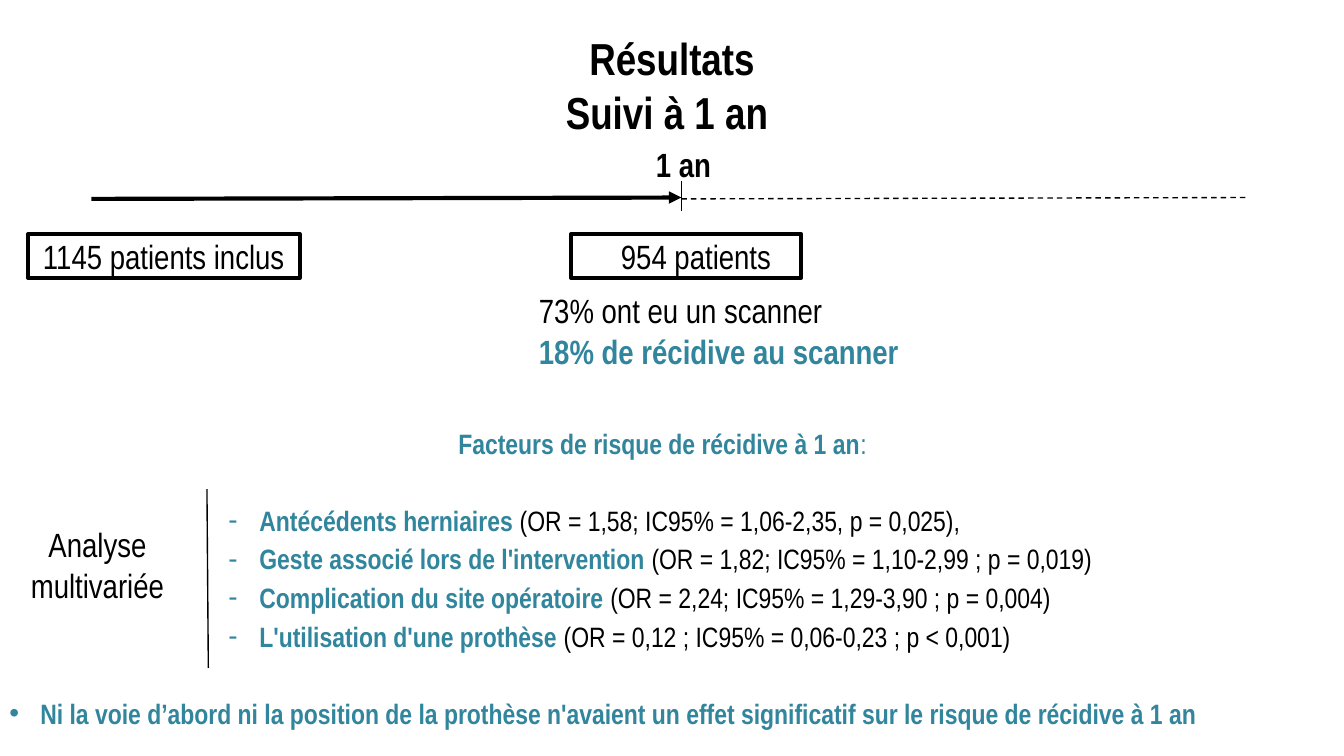
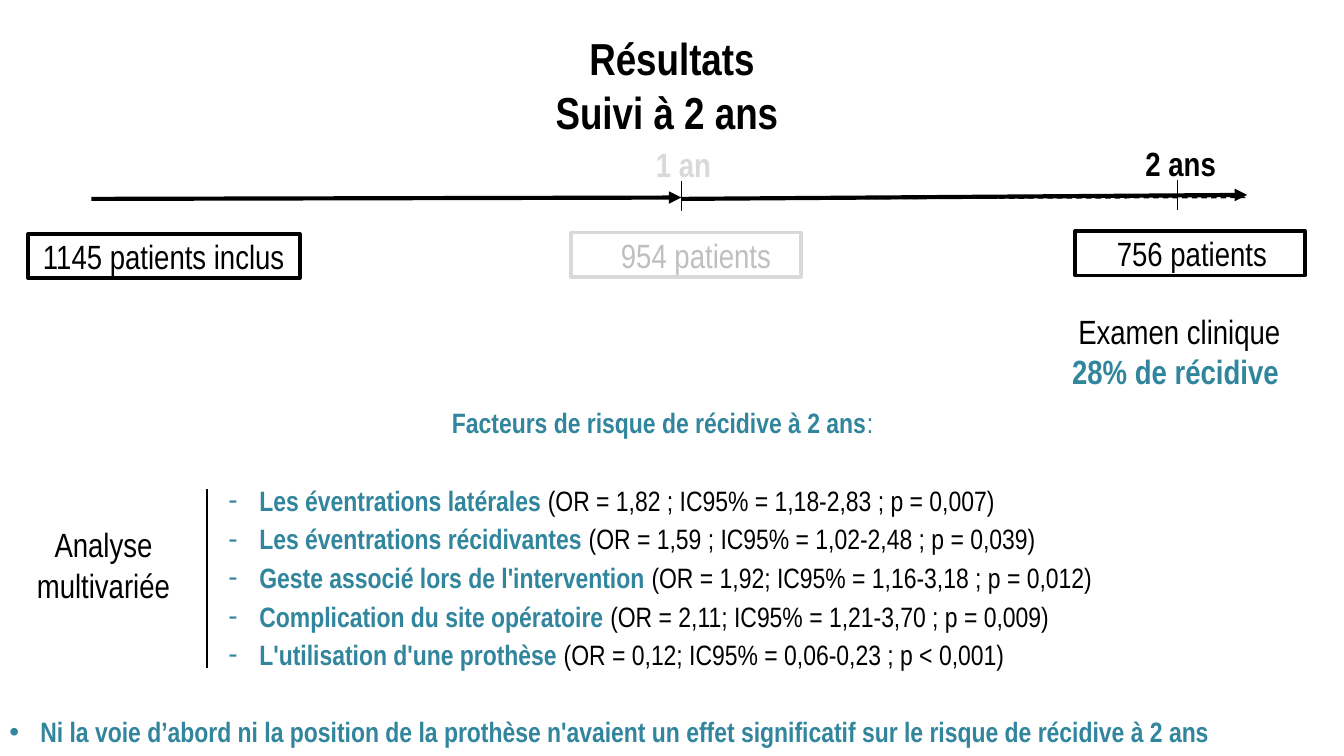
"""Build two follow-up result slides: timeline, cohort sizes and risk factors."""
import pptx
import pptx.util
import pptx.dml.color
import pptx.enum.dml
import pptx.enum.shapes
import pptx.enum.text
import lxml.etree

Inches, Pt = pptx.util.Inches, pptx.util.Pt
ALIGN = pptx.enum.text.PP_ALIGN
ANCHOR = pptx.enum.text.MSO_ANCHOR
colour = pptx.dml.color.RGBColor.from_string
FONT = "Arial Narrow"
BLACK, TEAL, PALE, GREY = "000000", "31859C", "D9D9D9", "BFBFBF"
BLANK_LINE = Pt(20.7)


def write(shape, paragraphs, size, align, place=None):
    """Fill a shape with paragraphs made of (text, colour, bold) runs."""
    if place:
        shape.left, shape.top, shape.width, shape.height = map(Inches, place)
    frame = shape.text_frame
    frame.word_wrap = True
    frame.auto_size = pptx.enum.text.MSO_AUTO_SIZE.NONE
    frame.vertical_anchor = ANCHOR.TOP
    frame.margin_left = frame.margin_right = Inches(0.07)
    frame.margin_top = frame.margin_bottom = Inches(0.04)
    for index, runs in enumerate(paragraphs):
        para = frame.add_paragraph() if index else frame.paragraphs[0]
        para.alignment = align
        para.space_before = Pt(0)
        for text, hue, bold in runs:
            span = para.add_run()
            span.text = text
            span.font.name, span.font.size, span.font.bold = FONT, Pt(size), bold
            span.font.color.rgb = colour(hue)
    return frame


def draw_line(page, start, end, width=0.75, dashed=False, arrow=False):
    """Draw a black straight line, dashed or with an arrowhead at its end."""
    line = page.shapes.add_connector(
        pptx.enum.shapes.MSO_CONNECTOR.STRAIGHT, *map(Inches, start + end))
    line.line.color.rgb = colour(BLACK)
    line.line.width = Pt(width)
    if dashed:
        line.line.dash_style = pptx.enum.dml.MSO_LINE.DASH
    properties = line._element.spPr
    namespace = "{%s}" % properties.nsmap["a"]
    if arrow:
        lxml.etree.SubElement(line.line._get_or_add_ln(), namespace + "tailEnd", type="triangle")
    lxml.etree.SubElement(properties, namespace + "effectLst")


slides = [
    {
        "period": "1 an",
        "arrows": [((0.68, 1.48), (5.07, 1.47))],
        "milestones": [("1 an", 5.07, 1.35, 4.68, BLACK)],
        "cohorts": [
            ("1145 patients inclus", (0.21, 1.74, 2.02, 0.33), 0.11, BLACK, BLACK),
            ("954 patients", (4.25, 1.74, 1.71, 0.33), 0.37, BLACK, BLACK),
        ],
        "finding": ("73% ont eu un scanner", "18% de récidive au scanner"),
        "finding_place": (3.94, 2.12, 3.17, 0.68),
        "finding_align": ALIGN.LEFT,
        "factors_place": (0, 3.13, 9.86, 2.36),
        "factors": [
            ("Antécédents herniaires ", "(OR = 1,58; IC95% = 1,06-2,35, p = 0,025), "),
            ("Geste associé lors de l'intervention ", "(OR = 1,82; IC95% = 1,10-2,99 ; p = 0,019)"),
            ("Complication du site opératoire ", "(OR = 2,24; IC95% = 1,29-3,90 ; p = 0,004)"),
            ("L'utilisation d'une prothèse ", "(OR = 0,12 ; IC95% = 0,06-0,23 ; p < 0,001)"),
        ],
        "divider_foot": 1.55,
        "analysis_place": (0.07, 3.86, 1.31, 0.68),
    },
    {
        "period": "2 ans",
        "arrows": [((0.68, 1.48), (5.07, 1.47)), ((5.07, 1.48), (9.28, 1.45))],
        "milestones": [("1 an", 5.07, 1.35, 4.68, PALE), ("2 ans", 8.76, 1.34, 8.38, BLACK)],
        "cohorts": [
            ("1145 patients inclus", (0.21, 1.74, 2.02, 0.33), 0.11, BLACK, BLACK),
            ("954 patients", (4.25, 1.73, 1.71, 0.33), 0.37, GREY, PALE),
            ("756 patients", (8, 1.72, 1.71, 0.33), 0.31, BLACK, BLACK),
        ],
        "finding": ("Examen clinique", "28% de récidive "),
        "finding_place": (7.63, 2.27, 2.29, 0.68),
        "finding_align": ALIGN.CENTER,
        "factors_place": (0, 2.98, 9.86, 2.65),
        "factors": [
            ("Les éventrations latérales ", "(OR = 1,82 ; IC95% = 1,18-2,83 ; p = 0,007)"),
            ("Les éventrations récidivantes ", "(OR = 1,59 ; IC95% = 1,02-2,48 ; p = 0,039) "),
            ("Geste associé lors de l'intervention ", "(OR = 1,92; IC95% = 1,16-3,18 ; p = 0,012) "),
            ("Complication du site opératoire ", "(OR = 2,11; IC95% = 1,21-3,70 ; p = 0,009)"),
            ("L'utilisation d'une prothèse ", "(OR = 0,12; IC95% = 0,06-0,23 ; p < 0,001)"),
        ],
        "divider_foot": 1.54,
        "analysis_place": (0.16, 3.86, 1.22, 0.68),
    },
]

deck = pptx.Presentation()
deck.slide_width = Inches(10)
deck.slide_height = deck.slide_width * 9 // 16

for content in slides:
    page = deck.slides.add_slide(deck.slide_layouts[1])
    period = content["period"]

    write(page.shapes.title, [[("Résultats", BLACK, True)], [(f"Suivi à {period} ", BLACK, True)]],
          24, ALIGN.CENTER, (0, 0.19, 10, 0.88))

    heading = [(f"Facteurs de risque de récidive à {period}", TEAL, True), (":", TEAL, False)]
    factors = [[(name, TEAL, True), (odds, BLACK, False)] for name, odds in content["factors"]]
    closing = [("Ni la voie d’abord ni la position de la prothèse n'avaient un effet significatif "
                f"sur le risque de récidive à {period}", TEAL, True)]
    frame = write(page.placeholders[1], [heading, *factors, closing],
                  15, ALIGN.JUSTIFY, content["factors_place"])
    last = len(factors) + 1
    for index, para in enumerate(frame.paragraphs):
        properties = para._p.get_or_add_pPr()
        namespace = "{%s}" % properties.nsmap["a"]
        if index == 0:
            para.alignment = ALIGN.CENTER
            margin, hanging = 0, 0
            lxml.etree.SubElement(properties, namespace + "buNone")
        else:
            para.line_spacing = 1.15
            para.level = 0 if index == last else 4
            margin, hanging = (0.23 if index == last else 1.86), -0.23
            bullet = "•" if index == last else "-"
            lxml.etree.SubElement(properties, namespace + "buChar", char=bullet)
        if index in (1, last):
            para.space_before = BLANK_LINE
        properties.set("marL", str(Inches(margin)))
        properties.set("indent", str(Inches(hanging)))

    draw_line(page, (5.07, 1.48), (9.28, 1.47), dashed=True)
    for start, end in content["arrows"]:
        draw_line(page, start, end, width=2.25, arrow=True)
    for label, x, top, label_left, hue in content["milestones"]:
        draw_line(page, (x, top), (x, top + 0.22))
        box = page.shapes.add_textbox(0, 0, 0, 0)
        write(box, [[(label, hue, True)]], 18, ALIGN.CENTER, (label_left, top - 0.32, 0.81, 0.38))

    for label, place, inset, hue, border in content["cohorts"]:
        box = page.shapes.add_shape(pptx.enum.shapes.MSO_SHAPE.RECTANGLE, *map(Inches, place))
        box.shadow.inherit = False
        box.fill.background()
        box.line.color.rgb = colour(border)
        box.line.width = Pt(2)
        frame = write(box, [[(label, hue, False)]], 18, ALIGN.LEFT)
        frame.vertical_anchor = ANCHOR.MIDDLE
        frame.margin_left = Inches(inset)
        frame.margin_right = frame.margin_top = frame.margin_bottom = 0

    method, result = content["finding"]
    box = page.shapes.add_textbox(0, 0, 0, 0)
    write(box, [[(method, BLACK, False)], [(result, TEAL, True)]],
          18, content["finding_align"], content["finding_place"])

    draw_line(page, (1.54, 3.64), (content["divider_foot"], 4.97))
    box = page.shapes.add_textbox(0, 0, 0, 0)
    write(box, [[("Analyse multivariée", BLACK, False)]],
          18, ALIGN.CENTER, content["analysis_place"])

deck.save("out.pptx")
